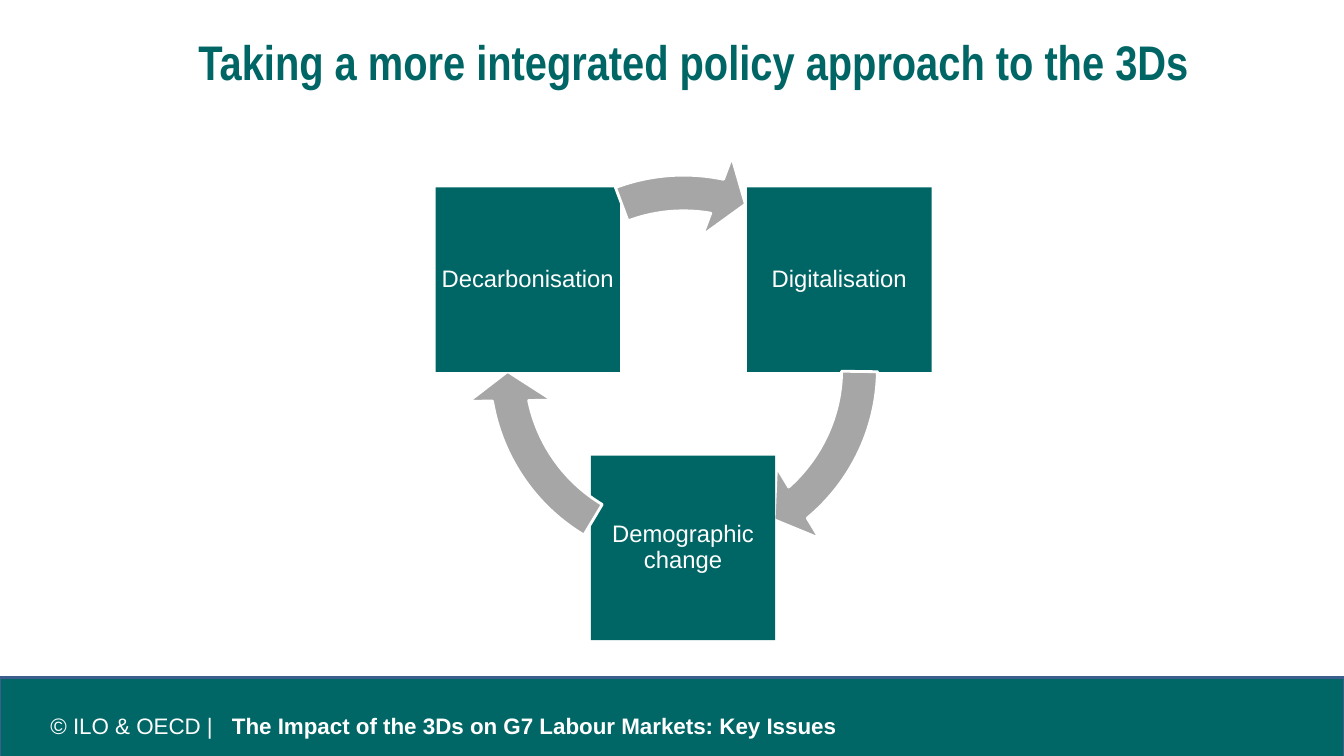
"""Slide on a joined policy approach to the 3Ds, drawn as a three-step cycle."""
from dataclasses import dataclass
from math import cos, radians, sin

from lxml.etree import SubElement
from pptx import Presentation
from pptx.dml.color import RGBColor
from pptx.enum.shapes import MSO_SHAPE
from pptx.enum.text import MSO_ANCHOR, PP_ALIGN
from pptx.oxml.ns import qn
from pptx.util import Pt

PX = 9144


@dataclass(frozen=True)
class Theme:
    teal: str = "006665"
    band: str = "006666"
    edge: str = "3A5F8C"
    grey: str = "A6A6A6"
    white: str = "FFFFFF"
    sans: str = "Arial"
    narrow: str = "Arial Narrow"
    title: float = 34.7
    label: float = 17
    foot: float = 16


class Deck:
    def __init__(self, theme):
        self.theme = theme
        self.prs = Presentation()
        self.prs.slide_width, self.prs.slide_height = 1333 * PX, 750 * PX
        self.slide = self.prs.slides.add_slide(self.prs.slide_layouts[6])

    def shape(self, kind, box, fill, line=None):
        item = self.slide.shapes.add_shape(kind, *(n * PX for n in box))
        item.shadow.inherit = False
        item.fill.solid()
        item.fill.fore_color.rgb = RGBColor.from_string(fill)
        if line:
            item.line.color.rgb = RGBColor.from_string(line)
            item.line.width = Pt(2)
        else:
            item.line.fill.background()
        return item

    def frame(self, item, pads, anchor):
        frame = item.text_frame
        frame.word_wrap = True
        frame.vertical_anchor = anchor
        (frame.margin_left, frame.margin_top,
         frame.margin_right, frame.margin_bottom) = (n * PX for n in pads)
        return frame.paragraphs[0]

    def text(self, box, pads, anchor):
        item = self.slide.shapes.add_textbox(*(n * PX for n in box))
        return self.frame(item, pads, anchor)

    def run(self, para, text, size, color, face, bold=False):
        run = para.add_run()
        run.text = text
        font = run.font
        font.size, font.name, font.bold = Pt(size), face, bold
        font.color.rgb = RGBColor.from_string(color)

    def tab(self, para, pos):
        tabs = SubElement(para._p.get_or_add_pPr(), qn("a:tabLst"))
        SubElement(tabs, qn("a:tab"), pos=str(pos * PX), algn="l")

    def node(self, box, label):
        look = self.theme
        item = self.shape(MSO_SHAPE.RECTANGLE, box, look.teal)
        para = self.frame(item, (2, 2, 2, 2), MSO_ANCHOR.MIDDLE)
        para.alignment = PP_ALIGN.CENTER
        para.line_spacing = 0.9
        para.space_after = Pt(6)
        self.run(para, label, look.label, look.white, look.sans)

    def arrow(self, box, head, tail):
        look = self.theme
        item = self.shape(MSO_SHAPE.CIRCULAR_ARROW, box, look.grey, look.white)
        for i, value in enumerate((0.082, 5.755, head, tail, 0.096)):
            item.adjustments[i] = value

    def cycle(self, mid, reach, side, ring, steps):
        x, y = mid
        for i, (label, head, tail) in enumerate(steps):
            turn = radians(120 * i - 30)
            left = round(x + reach * cos(turn) - side / 2)
            top = round(y + reach * sin(turn) - side / 2)
            self.node((left, top, side, side), label)
            self.arrow((x - ring // 2, y - ring // 2, ring, ring), head, tail)

    def footer(self, credit, name):
        look = self.theme
        self.shape(MSO_SHAPE.RECTANGLE, (0, 672, 1333, 79), look.band, look.edge)
        para = self.text((37, 706, 969, 28), (13, 7, 0, 7), MSO_ANCHOR.MIDDLE)
        self.tab(para, 180)
        self.run(para, credit + "\t", look.foot, look.white, look.sans)
        self.run(para, name, look.foot, look.white, look.sans, True)

    def title(self, text):
        look = self.theme
        para = self.text((58, 25, 1260, 96), (13, 7, 13, 7), MSO_ANCHOR.TOP)
        para.alignment = PP_ALIGN.CENTER
        self.run(para, text, look.title, look.teal, look.narrow, True)


def main():
    deck = Deck(Theme())
    deck.footer("© ILO & OECD |",
                "The Impact of the 3Ds on G7 Labour Markets: Key Issues")
    deck.title("Taking a more integrated policy approach to the 3Ds")
    deck.cycle((678, 366), 178, 183, 432, (
        ("Digitalisation", 29.665, 0.5),
        ("Demographic change", 101.745, 72.58),
        ("Decarbonisation", 168.592, 149.653),
    ))
    deck.prs.save("out.pptx")


if __name__ == "__main__":
    main()
